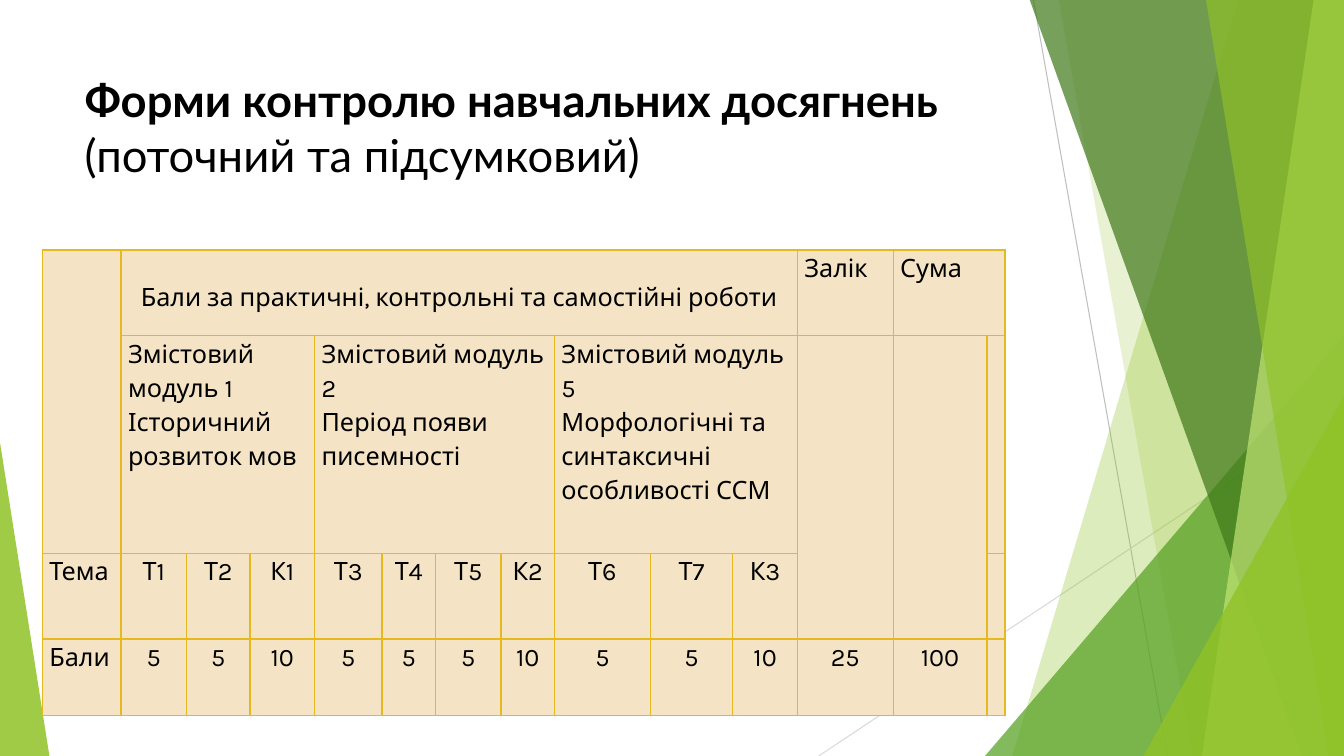
from lxml import etree
from pptx import Presentation
from pptx.dml.color import RGBColor
from pptx.enum.shapes import MSO_CONNECTOR, MSO_SHAPE
from pptx.enum.text import PP_ALIGN
from pptx.oxml import parse_xml
from pptx.oxml.ns import nsdecls, qn
from pptx.util import Inches, Pt

BLACK = RGBColor(0x00, 0x00, 0x00)
LIME = RGBColor(0x90, 0xC2, 0x26)
PALE_LIME = RGBColor(0xC0, 0xE4, 0x74)
GREEN = RGBColor(0x54, 0xA0, 0x21)
DARK_GREEN = RGBColor(0x3F, 0x78, 0x19)
GREY = RGBColor(0xBF, 0xBF, 0xBF)
LIGHT_GREY = RGBColor(0xD9, 0xD9, 0xD9)
CREAM = RGBColor(0xF4, 0xE4, 0xC5)
GOLD = RGBColor(0xE6, 0xB9, 0x1E)

WIDTH, HEIGHT, TOP = 13.33, 7.5, -0.01

COLUMNS = [0.78, 0.65, 0.63, 0.64, 0.67, 0.53, 0.65, 0.53, 0.95, 0.82,
           0.64, 0.95, 0.93, 0.1]
ROWS = [0.85, 2.16, 0.85, 0.76]
# First row, first column, last row, last column
MERGES = [(0, 0, 1, 0), (0, 1, 0, 10), (0, 12, 0, 13), (1, 1, 1, 3),
          (1, 4, 1, 7), (1, 8, 1, 10), (1, 11, 2, 11), (1, 12, 2, 12)]
HEADINGS = {
    (0, 11): ["Залік"],
    (0, 12): ["Сума"],
    (1, 1): ["Змістовий модуль 1 Історичний розвиток мов"],
    (1, 4): ["Змістовий модуль 2", "Період появи писемності"],
    (1, 8): ["Змістовий модуль 5",
             "Морфологічні та синтаксичні особливості ССМ"],
    (2, 0): ["Тема"],
    (3, 0): ["Бали"],
}
TOPICS = ["Т1", "Т2", "К1", "Т3", "Т4", "Т5", "К2", "Т6", "Т7", "К3"]
POINTS = ["5", "5", "10", "5", "5", "5", "10", "5", "5", "10", "25", "100"]


def set_format(target, values):
    for name, value in values.items():
        setattr(target, name, value)


def paint(shape, color, opacity):
    """Fill a shape with a colour at the given opacity in percent."""
    shape.shadow.inherit = False
    shape.line.fill.background()
    shape.fill.solid()
    shape.fill.fore_color.rgb = color
    color_node = shape.fill._xPr.find(qn("a:solidFill"))[0]
    etree.SubElement(color_node, qn("a:alpha"), val=str(opacity * 1000))


def add_ray(page, start, end, color):
    ray = page.shapes.add_connector(
        MSO_CONNECTOR.STRAIGHT, *map(Inches, start + end))
    ray.line.color.rgb = color
    ray.line.width = Pt(0.75)
    etree.SubElement(ray._element.spPr, qn("a:effectLst"))


def add_band(page, top_x, bottom_x, color, opacity):
    """Add a band from a slanted left edge to the right side of the slide."""
    corners = [(top_x, TOP), (WIDTH, TOP), (WIDTH, HEIGHT), (bottom_x, HEIGHT)]
    points = [(Inches(x), Inches(y)) for x, y in corners]
    builder = page.shapes.build_freeform(*points[0], scale=1.0)
    builder.add_line_segments(points[1:], close=True)
    paint(builder.convert_to_shape(), color, opacity)


def add_wedge(page, left, top, width, peak, color, opacity):
    """Add a triangle standing on the bottom edge, its peak at 0 to 1."""
    wedge = page.shapes.add_shape(
        MSO_SHAPE.ISOSCELES_TRIANGLE, Inches(left), Inches(top),
        Inches(width), Inches(HEIGHT - top))
    wedge.adjustments[0] = peak
    paint(wedge, color, opacity)


def add_decoration(page):
    add_ray(page, (10.25, 0), (11.58, HEIGHT), GREY)
    add_ray(page, (WIDTH, 4.03), (8.12, HEIGHT), LIGHT_GREY)
    add_band(page, 12.28, 10.04, LIME, 30)
    add_band(page, 10.5, 11.83, LIME, 20)
    add_wedge(page, 9.77, 3.33, 3.56, 1, GREEN, 72)
    add_band(page, 10.21, 12.91, DARK_GREEN, 70)
    add_band(page, 13.03, 11.92, PALE_LIME, 70)
    add_band(page, 11.96, 13.18, LIME, 65)
    add_wedge(page, 11.34, 3.93, 1.99, 1, LIME, 80)
    add_wedge(page, 0, 4.39, 0.49, 0, LIME, 85)


def add_span(para, text, font, size, bold=False):
    span = para.add_run()
    span.text = text
    set_format(span.font, {"name": font, "size": Pt(size), "bold": bold})
    span.font.color.rgb = BLACK


def add_title(page):
    box = page.shapes.add_textbox(
        Inches(0.74), Inches(0.67), Inches(9.4), Inches(1.44))
    box.text_frame.word_wrap = True
    para = box.text_frame.paragraphs[0]
    add_span(para, "Форми контролю навчальних досягнень", "Lato", 32.4, True)
    para.add_line_break()
    add_span(para, "(поточний та підсумковий)", "Lato", 32.4)


def style_cell(cell):
    set_format(cell, {"margin_left": Inches(0.07), "margin_right": Inches(0.07),
                      "margin_top": 0, "margin_bottom": 0})
    cell.fill.solid()
    cell.fill.fore_color.rgb = CREAM
    properties = cell._tc.get_or_add_tcPr()
    for index, side in enumerate(("lnL", "lnR", "lnT", "lnB")):
        properties.insert(index, parse_xml(
            f'<a:{side} {nsdecls("a")} w="{Pt(1)}"><a:solidFill>'
            f'<a:srgbClr val="{GOLD}"/></a:solidFill></a:{side}>'))


def write_cell(cell, lines, align=PP_ALIGN.LEFT):
    frame = cell.text_frame
    for index, line in enumerate(lines):
        para = frame.add_paragraph() if index else frame.paragraphs[0]
        set_format(para, {"alignment": align, "line_spacing": 1.15})
        add_span(para, line, "Karla", 18)


def add_score_table(page):
    table = page.shapes.add_table(
        len(ROWS), len(COLUMNS), Inches(0.42), Inches(2.48),
        Inches(sum(COLUMNS)), Inches(sum(ROWS))).table
    set_format(table, {"first_row": False, "horz_banding": False})
    for column, width in zip(table.columns, COLUMNS):
        column.width = Inches(width)
    for row, height in zip(table.rows, ROWS):
        row.height = Inches(height)
    for cell in table.iter_cells():
        style_cell(cell)
    for top, left, bottom, right in MERGES:
        table.cell(top, left).merge(table.cell(bottom, right))

    scores_heading = table.cell(0, 1)
    scores_heading.margin_top = Inches(0.29)
    write_cell(scores_heading,
               ["Бали за практичні, контрольні та самостійні роботи"],
               PP_ALIGN.CENTER)
    for position, lines in HEADINGS.items():
        write_cell(table.cell(*position), lines)
    for row, values in ((2, TOPICS), (3, POINTS)):
        for column, value in enumerate(values, start=1):
            write_cell(table.cell(row, column), [value], PP_ALIGN.CENTER)


def main():
    deck = Presentation()
    set_format(deck, {"slide_width": Inches(WIDTH),
                      "slide_height": Inches(HEIGHT)})
    page = deck.slides.add_slide(deck.slide_layouts[6])
    add_decoration(page)
    add_title(page)
    add_score_table(page)
    deck.save("out.pptx")


if __name__ == "__main__":
    main()
